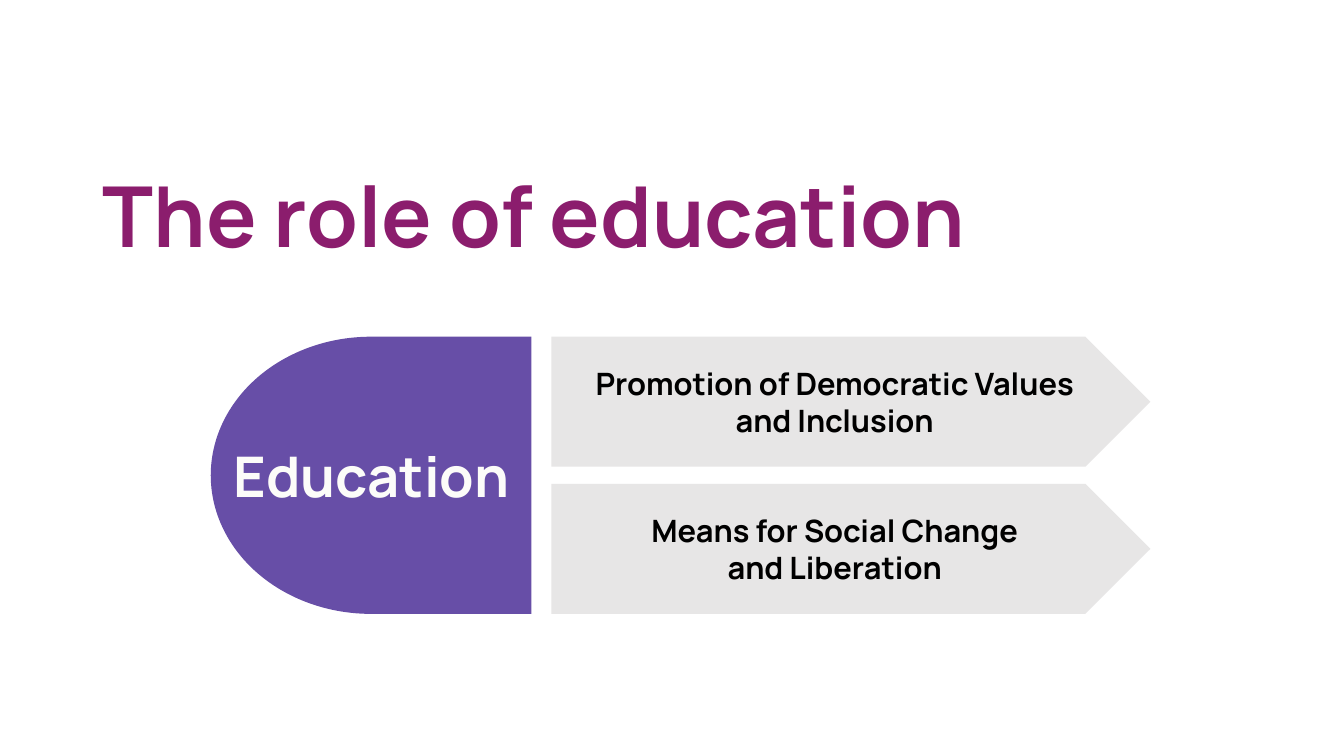
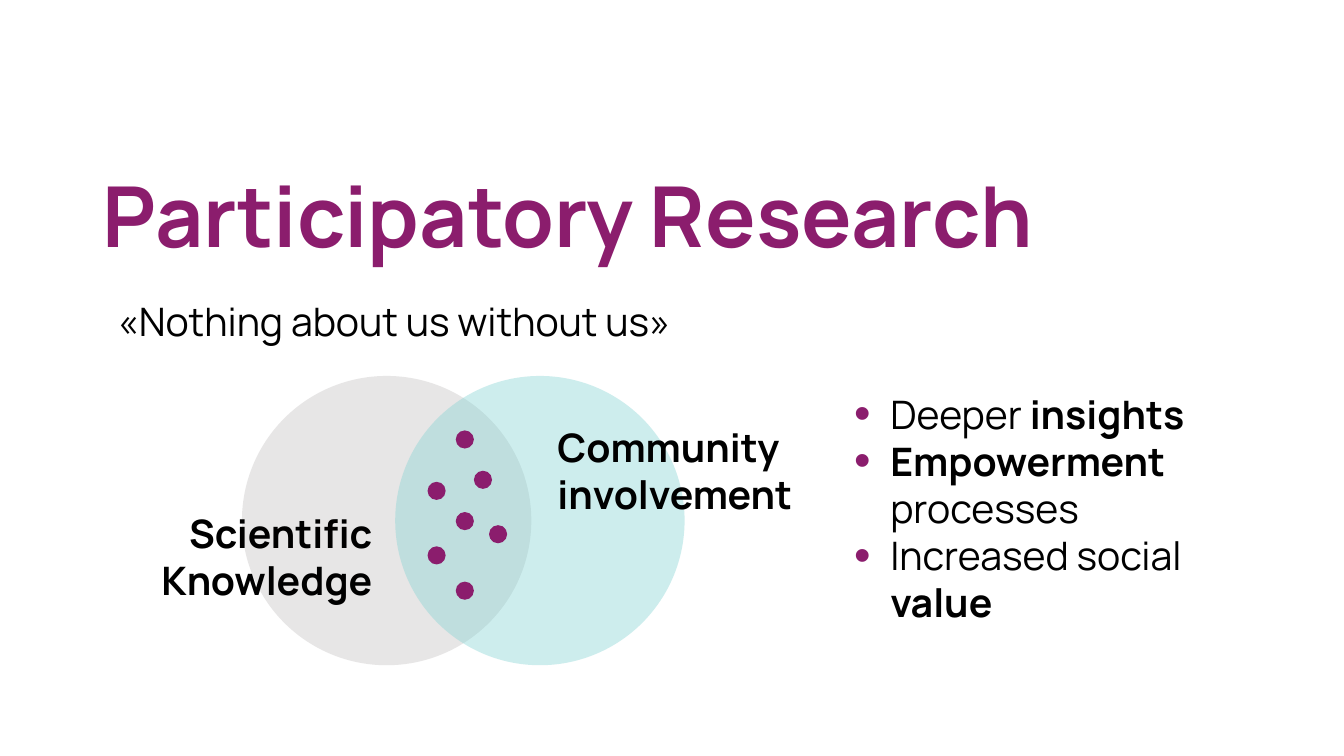
"""Build two slides on education and participatory research."""
from dataclasses import dataclass
from typing import NamedTuple

from lxml.etree import SubElement as Sub
from pptx import Presentation
from pptx.dml.color import RGBColor as Rgb
from pptx.enum.shapes import MSO_SHAPE as Kind
from pptx.enum.text import MSO_ANCHOR as Anchor, MSO_AUTO_SIZE as Fit, PP_ALIGN as Align
from pptx.oxml.ns import qn
from pptx.shapes.autoshape import Shape
from pptx.slide import Slide
from pptx.text.text import TextFrame as Frame, _Run as Run
from pptx.util import Emu, Pt

SCALE = 9144


@dataclass(frozen=True)
class Theme:
    font: str = "Manrope"
    plum: str = "8B1D6D"
    violet: str = "674EA7"
    aqua: str = "80D3D3"
    grey: str = "E7E6E6"
    cream: str = "FCFCF9"
    black: str = "000000"
    title: int = 60
    hero: int = 40
    body: int = 28
    label: int = 22


class Rect(NamedTuple):
    left: int
    top: int
    width: int
    height: int


class Style(NamedTuple):
    size: int
    color: str
    bold: bool = True
    align: Align = Align.LEFT


class Part(NamedTuple):
    text: str
    bold: bool


class Spot(NamedTuple):
    left: int
    top: int


THEME = Theme()
LABEL = Style(THEME.label, THEME.black, align=Align.CENTER)
ARROWS = (
    ("Promotion of Democratic Values", "and Inclusion"),
    ("Means for Social Change", "and Liberation"),
)
POINTS = (
    (Part("Deeper ", False), Part("insights", True)),
    (Part("Empowerment ", True), Part("processes", False)),
    (Part("Increased social ", False), Part("value", True)),
)
DOTS = (
    Spot(424, 478), Spot(485, 521), Spot(452, 577), Spot(470, 467),
    Spot(452, 508), Spot(424, 542), Spot(452, 427),
)


def px(num: int) -> Emu:
    return Emu(num * SCALE)


def place(shape: Shape, rect: Rect) -> None:
    shape.left, shape.top, shape.width, shape.height = map(px, rect)


def ink(run: Run, style: Style) -> None:
    font = run.font
    font.name, font.size, font.bold = THEME.font, Pt(style.size), style.bold
    font.color.rgb = Rgb.from_string(style.color)


def pad(frame: Frame, side: int = 10, edge: int = 10) -> None:
    frame.word_wrap, frame.auto_size = True, Fit.NONE
    frame.margin_left = frame.margin_right = px(side)
    frame.margin_top = frame.margin_bottom = px(edge)


def write(frame: Frame, text: str, style: Style) -> None:
    frame.text = text
    for para in frame.paragraphs:
        para.alignment = style.align
        for run in para.runs:
            ink(run, style)


def head(slide: Slide, text: str) -> None:
    shape = slide.shapes.title
    place(shape, Rect(92, 174, 1150, 95))
    frame = shape.text_frame
    pad(frame, edge=5)
    frame.vertical_anchor = Anchor.BOTTOM
    write(frame, text, Style(THEME.title, THEME.plum))
    frame.paragraphs[0].line_spacing = 0.9


def draw(slide: Slide, kind: Kind, rect: Rect, color: str, alpha: int = 100) -> Shape:
    shape = slide.shapes.add_shape(kind, *map(px, rect))
    shape.shadow.inherit = False
    shape.line.fill.background()
    shape.fill.solid()
    shape.fill.fore_color.rgb = Rgb.from_string(color)
    if alpha < 100:
        tint = shape._element.spPr.find(qn("a:solidFill")).find(qn("a:srgbClr"))
        Sub(tint, qn("a:alpha"), val=str(alpha * 1000))
    return shape


def note(slide: Slide, rect: Rect, text: str, style: Style) -> None:
    frame = slide.shapes.add_textbox(*map(px, rect)).text_frame
    pad(frame)
    write(frame, text, style)


def points(slide: Slide, rect: Rect, items: tuple[tuple[Part, ...], ...]) -> None:
    shape = slide.placeholders[1]
    place(shape, rect)
    frame = shape.text_frame
    pad(frame)
    frame.vertical_anchor = Anchor.TOP
    for num, parts in enumerate(items):
        para = frame.add_paragraph() if num else frame.paragraphs[0]
        props = para._p.get_or_add_pPr()
        props.set("marL", str(px(36)))
        props.set("indent", str(px(-36)))
        Sub(Sub(props, qn("a:buClr")), qn("a:srgbClr"), val=THEME.plum)
        Sub(props, qn("a:buSzPct"), val="120000")
        Sub(props, qn("a:buFont"), typeface="Arial")
        Sub(props, qn("a:buChar"), char="•")
        para.space_before = Pt(0)
        for part in parts:
            run = para.add_run()
            run.text = part.text
            ink(run, Style(THEME.body, THEME.black, part.bold))


def role(slide: Slide) -> None:
    head(slide, "The role of education")
    delay = draw(slide, Kind.FLOWCHART_DELAY, Rect(209, 334, 318, 275), THEME.violet)
    delay._element.spPr.get_or_add_xfrm().set("flipH", "1")
    note(slide, Rect(219, 428, 299, 87), "Education",
         Style(THEME.hero, THEME.cream, align=Align.CENTER))
    for row, lines in enumerate(ARROWS):
        rect = Rect(547, 334 + row * 146, 594, 129)
        frame = draw(slide, Kind.PENTAGON, rect, THEME.grey).text_frame
        pad(frame)
        frame.vertical_anchor = Anchor.MIDDLE
        write(frame, "\n".join(lines), LABEL)


def study(slide: Slide) -> None:
    head(slide, "Participatory Research")
    draw(slide, Kind.OVAL, Rect(240, 373, 287, 287), THEME.grey)
    draw(slide, Kind.OVAL, Rect(392, 373, 287, 287), THEME.aqua, 39)
    bold = Style(THEME.body, THEME.black)
    note(slide, Rect(92, 495, 287, 111), "Scientific Knowledge",
         bold._replace(align=Align.RIGHT))
    note(slide, Rect(543, 410, 308, 111), "Community involvement", bold)
    points(slide, Rect(837, 377, 413, 255), POINTS)
    for dot in DOTS:
        draw(slide, Kind.OVAL, Rect(*dot, 18, 18), THEME.plum)
    note(slide, Rect(107, 285, 684, 79), "«Nothing about us without us»",
         bold._replace(bold=False))


def main() -> None:
    deck = Presentation()
    deck.slide_width, deck.slide_height = px(1333), px(750)
    for layout, build in ((5, role), (1, study)):
        build(deck.slides.add_slide(deck.slide_layouts[layout]))
    deck.save("out.pptx")


if __name__ == "__main__":
    main()
